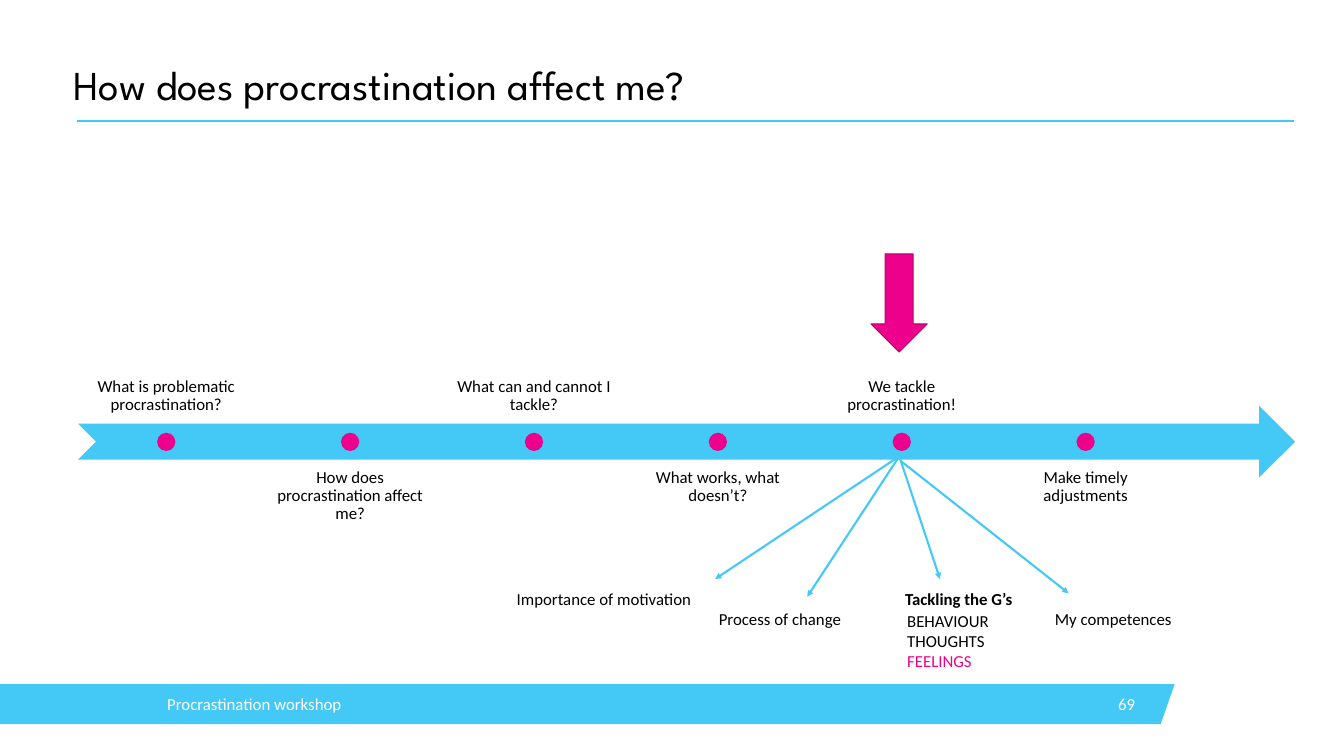
"""Build the procrastination workshop roadmap slide."""
from lxml import etree
from pptx import Presentation
from pptx.dml.color import RGBColor
from pptx.enum.shapes import MSO_CONNECTOR, MSO_SHAPE
from pptx.enum.text import MSO_ANCHOR, PP_ALIGN
from pptx.oxml.ns import qn
from pptx.util import Cm, Pt

TOP, MID, LOW = MSO_ANCHOR.TOP, MSO_ANCHOR.MIDDLE, MSO_ANCHOR.BOTTOM
LEFT, CENTER, RIGHT = PP_ALIGN.LEFT, PP_ALIGN.CENTER, PP_ALIGN.RIGHT
NOTCH, DOWN, OVAL = MSO_SHAPE.NOTCHED_RIGHT_ARROW, MSO_SHAPE.DOWN_ARROW, MSO_SHAPE.OVAL
STRAIGHT = MSO_CONNECTOR.STRAIGHT
HEX = {"blue": "44C8F5", "pink": "EC008C", "edge": "AF0068", "black": "000000", "white": "FFFFFF"}
INK = {name: RGBColor.from_string(code) for name, code in HEX.items()}

deck = Presentation()
deck.slide_width, deck.slide_height = Cm(50.8), Cm(28.58)
slide = deck.slides.add_slide(deck.slide_layouts[5])
shapes = slide.shapes


def write(text, box, ink="black", align=LEFT, anchor=TOP, inset=(0.25, 0.13), space=1.0):
    frame = shapes.add_textbox(*map(Cm, box)).text_frame
    frame.word_wrap = True
    frame.vertical_anchor = anchor
    frame.margin_left = frame.margin_right = Cm(inset[0])
    frame.margin_top = frame.margin_bottom = Cm(inset[1])
    frame.text = text
    for para in frame.paragraphs:
        para.alignment = align
        para.line_spacing = space
        for run in para.runs:
            run.font.name = "Calibri"
            run.font.size = Pt(18)
            run.font.color.rgb = INK[ink]
    return frame


def draw(start, end, head=False):
    line = shapes.add_connector(STRAIGHT, *map(Cm, start + end))
    line.line.color.rgb = INK["blue"]
    line.line.width = Pt(2.25)
    if head:
        etree.SubElement(line.line._get_or_add_ln(), qn("a:tailEnd"), type="triangle")
    etree.SubElement(line._element.spPr, qn("a:effectLst"))


pen = shapes.build_freeform(Cm(0), Cm(25.86))
pen.add_line_segments([(Cm(x), Cm(y)) for x, y in [(44.4, 25.86), (43.87, 27.38), (0, 27.38)]])
band = pen.convert_to_shape()
band.shadow.inherit = False
band.fill.solid()
band.fill.fore_color.rgb = INK["blue"]
band.line.fill.background()

draw((2.9, 4.57), (48.9, 4.57))
write("69", (40.39, 25.86, 2.77, 1.52), "white", RIGHT, MID)
write("Procrastination workshop", (6.32, 25.86, 17.14, 1.52), "white", anchor=MID, inset=(0, 0))

title = shapes.title
title.left, title.top, title.width, title.height = map(Cm, (2.77, 2.46, 46.05, 1.75))
frame = title.text_frame
frame.margin_left = frame.margin_right = frame.margin_top = frame.margin_bottom = 0
frame.vertical_anchor = TOP
frame.text = "How does procrastination affect me?"
para = frame.paragraphs[0]
para.alignment = LEFT
para.line_spacing = 0.9
font = para.runs[0].font
font.name = "League Spartan"
font.size = Pt(44)
font.color.rgb = INK["black"]

steps = [
    "What is problematic procrastination?",
    "How does procrastination affect me?",
    "What can and cannot I tackle?",
    "What works, what doesn’t?",
    "We tackle procrastination!",
    "Make timely adjustments",
]
pitch = 6.95
marks = [(NOTCH, (2.95, 15.34, 46, 2.72), "blue")]
marks += [(OVAL, (5.94 + i * pitch, 16.36, 0.69, 0.69), "pink") for i in range(len(steps))]
marks.append((DOWN, (32.92, 9.6, 2.13, 3.71), "pink"))
for kind, box, ink in marks:
    mark = shapes.add_shape(kind, *map(Cm, box))
    mark.shadow.inherit = False
    mark.fill.solid()
    mark.fill.fore_color.rgb = INK[ink]
    if kind == DOWN:
        mark.line.color.rgb = INK["edge"]
        mark.line.width = Pt(1)
    else:
        mark.line.fill.background()

for i, step in enumerate(steps):
    top, anchor = (17.37, TOP) if i % 2 else (13.31, LOW)
    box = (2.97 + i * pitch, top, 6.63, 2.72)
    write(step, box, align=CENTER, anchor=anchor, inset=(0.36, 0.36), space=0.9)

fork = (33.99, 17.25)
for end in [(27.03, 21.89), (30.51, 22.56), (35.53, 21.89)]:
    draw(fork, end, True)
draw((34.04, 17.42), (40.39, 22.43), True)

write("Importance of motivation", (19.28, 22.12, 7.6, 1.02))
write("Process of change", (26.92, 22.9, 6, 1.02))
goals = write("Tackling the G’s", (33.96, 22.12, 5.6, 1.02))
goals.paragraphs[0].runs[0].font.bold = True
write("My competences", (39.62, 22.9, 6, 1.02))
parts = write("BEHAVIOUR\nTHOUGHTS\nFEELINGS", (34.04, 22.94, 5.5, 2.57))
parts.paragraphs[2].runs[0].font.color.rgb = INK["pink"]

deck.save("out.pptx")
